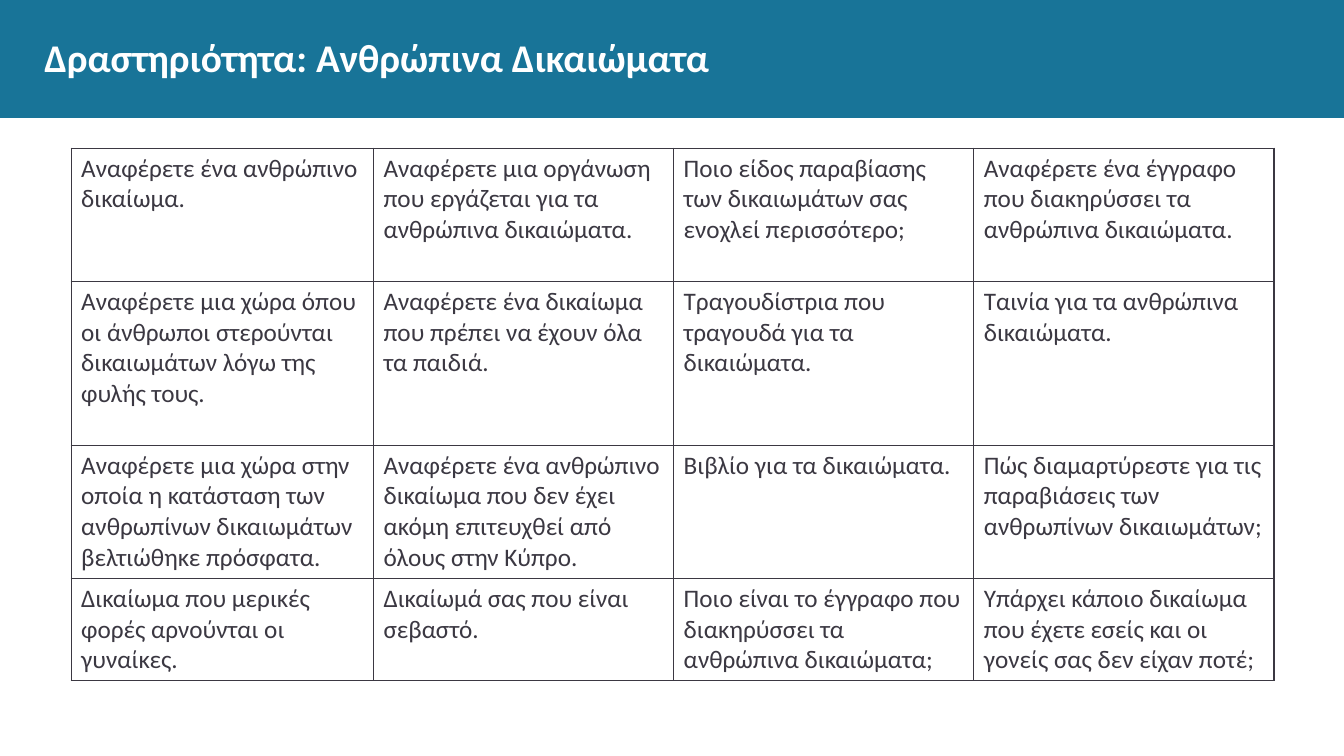
from lxml import etree
from pptx import Presentation
from pptx import util as u
from pptx.dml.color import RGBColor
from pptx.enum import shapes, text
from pptx.oxml import ns

Pt = u.Pt
BLUE, INK, WHITE = "187498", "3B3842", "FFFFFF"
COLS = [216, 214.4, 214.4, 214.4]
ROWS = [95.1, 117.1, 95.1, 73.1]
TASKS = [
    ["Αναφέρετε ένα ανθρώπινο δικαίωμα.",
     "Αναφέρετε μια οργάνωση που εργάζεται για τα ανθρώπινα δικαιώματα.",
     "Ποιο είδος παραβίασης των δικαιωμάτων σας ενοχλεί περισσότερο;",
     "Αναφέρετε ένα έγγραφο που διακηρύσσει τα ανθρώπινα δικαιώματα."],
    ["Αναφέρετε μια χώρα όπου οι άνθρωποι στερούνται δικαιωμάτων λόγω της φυλής τους.",
     "Αναφέρετε ένα δικαίωμα που πρέπει να έχουν όλα τα παιδιά.",
     "Τραγουδίστρια που τραγουδά για τα δικαιώματα.",
     "Ταινία για τα ανθρώπινα δικαιώματα."],
    ["Αναφέρετε μια χώρα στην οποία η κατάσταση των ανθρωπίνων δικαιωμάτων βελτιώθηκε πρόσφατα.",
     "Αναφέρετε ένα ανθρώπινο δικαίωμα που δεν έχει ακόμη επιτευχθεί από όλους στην Κύπρο.",
     "Βιβλίο για τα δικαιώματα.",
     "Πώς διαμαρτύρεστε για τις παραβιάσεις των ανθρωπίνων δικαιωμάτων;"],
    ["Δικαίωμα που μερικές φορές αρνούνται οι γυναίκες.",
     "Δικαίωμά σας που είναι σεβαστό.",
     "Ποιο είναι το έγγραφο που διακηρύσσει τα ανθρώπινα δικαιώματα;",
     "Υπάρχει κάποιο δικαίωμα που έχετε εσείς και οι γονείς σας δεν είχαν ποτέ;"],
]


def paint(fill, tone):
    """Give a fill one solid colour."""
    fill.solid()
    fill.fore_color.rgb = RGBColor.from_string(tone)


def write(frame, words, size=18, tone=INK, bold=False):
    """Put formatted text in a text frame."""
    frame.word_wrap = True
    para = frame.paragraphs[0]
    para.alignment = text.PP_ALIGN.LEFT
    run = para.add_run()
    run.text = words
    font = run.font
    font.name, font.size, font.bold = "Calibri", Pt(size), bold
    font.color.rgb = RGBColor.from_string(tone)


def edge(cell, tone=INK, width=1):
    """Draw all four borders of a cell."""
    props = cell._tc.get_or_add_tcPr()
    for spot, side in enumerate(("a:lnL", "a:lnR", "a:lnT", "a:lnB")):
        line = etree.Element(ns.qn(side), w=str(Pt(width)))
        fill = etree.SubElement(line, ns.qn("a:solidFill"))
        etree.SubElement(fill, ns.qn("a:srgbClr"), val=tone)
        props.insert(spot, line)


def head(slide, words):
    """Add the blue band and the title on it."""
    band = slide.shapes.add_shape(shapes.MSO_SHAPE.RECTANGLE, 0, 0, Pt(960), Pt(84.2))
    band.shadow.inherit = False
    paint(band.fill, BLUE)
    band.line.fill.background()
    title = slide.shapes.title
    title._element.addprevious(band._element)
    title.left, title.top, title.width, title.height = Pt(31.7), Pt(13.7), Pt(897), Pt(53.3)
    frame = title.text_frame
    frame.margin_left = frame.margin_top = frame.margin_right = frame.margin_bottom = 0
    frame.vertical_anchor = text.MSO_ANCHOR.MIDDLE
    frame.auto_size = text.MSO_AUTO_SIZE.NONE
    write(frame, words, size=28, tone=WHITE, bold=True)


def grid(slide, rows, left, top):
    """Add the bordered table of tasks."""
    table = slide.shapes.add_table(len(ROWS), len(COLS), Pt(left), Pt(top),
                                   Pt(sum(COLS)), Pt(sum(ROWS))).table
    table.first_row = table.horz_banding = False
    for col, width in zip(table.columns, COLS):
        col.width = Pt(width)
    for row, height, line in zip(table.rows, ROWS, rows):
        row.height = Pt(height)
        for cell, words in zip(row.cells, line):
            paint(cell.fill, WHITE)
            edge(cell)
            write(cell.text_frame, words)


def main():
    """Build and save the slide."""
    deck = Presentation()
    deck.slide_width, deck.slide_height = Pt(960), Pt(540)
    slide = deck.slides.add_slide(deck.slide_layouts[5])
    paint(slide.background.fill, WHITE)
    head(slide, "Δραστηριότητα: Ανθρώπινα Δικαιώματα")
    grid(slide, TASKS, 50.8, 105.8)
    deck.save("out.pptx")


if __name__ == "__main__":
    main()
